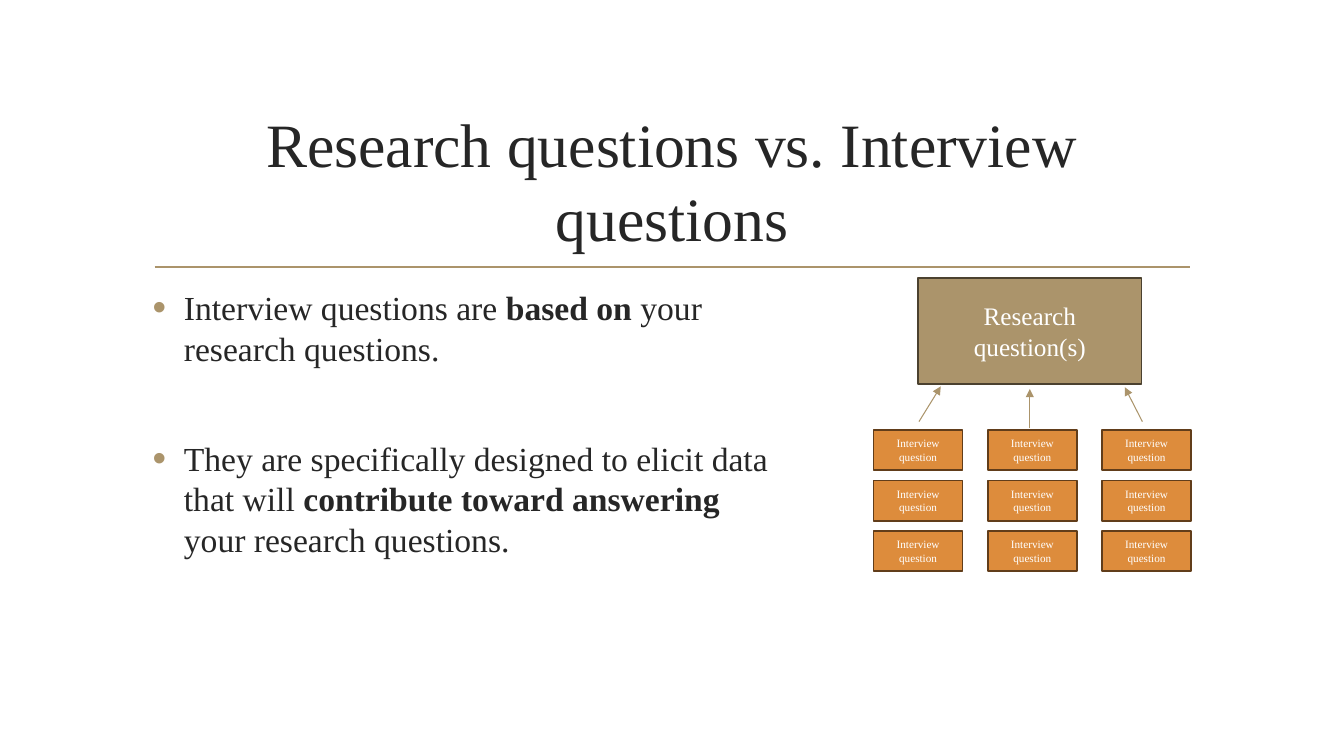
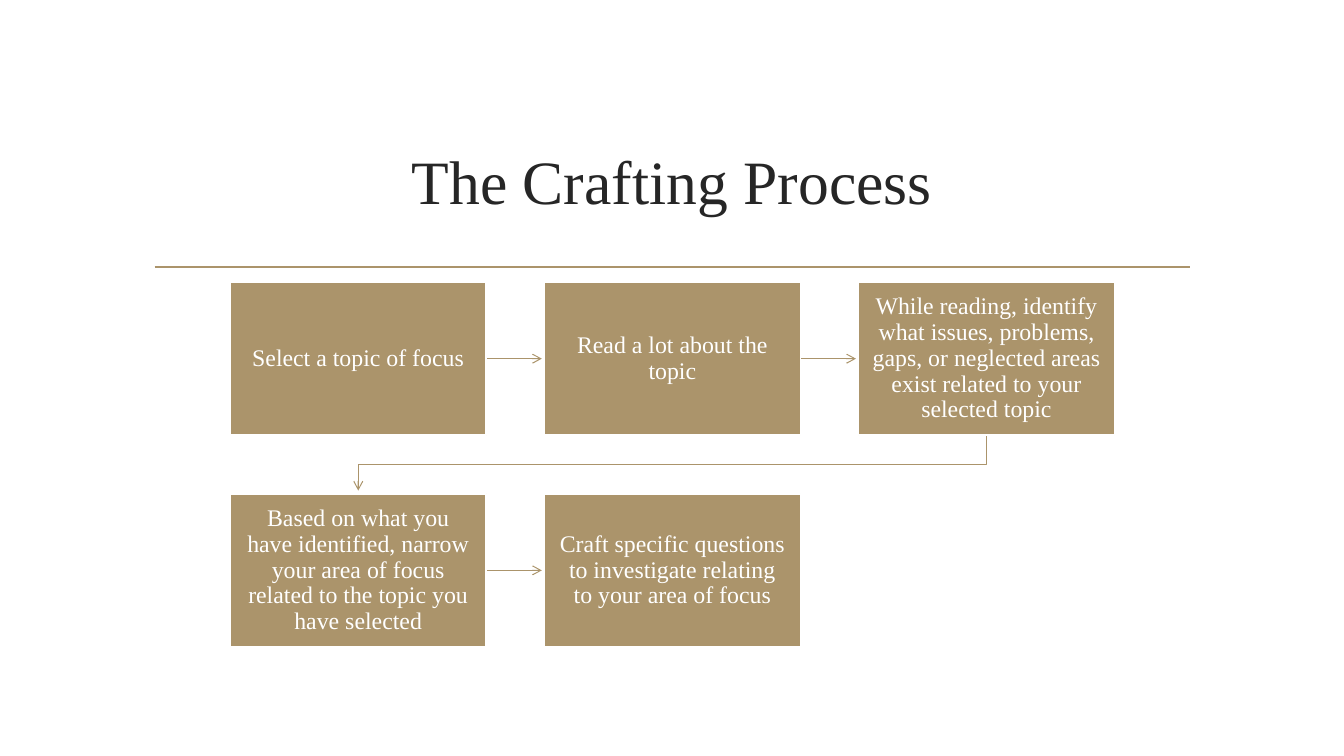
import pptx
import pptx.util
import pptx.dml.color
import pptx.enum.shapes
import pptx.enum.text
import pptx.oxml
import pptx.oxml.ns

Pt = pptx.util.Pt
INK, SAND, BARK = "262626", "AB946B", "4B412F"
RUST, UMBER, WHITE = "DD8C3C", "613D1A", "FFFFFF"


def paint(code):
    return pptx.dml.color.RGBColor.from_string(code)


def child(parent, tag, **attrs):
    node = pptx.oxml.parse_xml(f"<a:{tag} {pptx.oxml.ns.nsdecls('a')}/>")
    for key, value in attrs.items():
        node.set(key, value)
    parent.append(node)
    return node


class Deck:
    """Shared style and current slide, measured on a 16 by 9 grid."""

    font = "Times New Roman"
    middle = pptx.enum.text.MSO_ANCHOR.MIDDLE
    center = pptx.enum.text.PP_ALIGN.CENTER

    def __init__(self):
        self.file = pptx.Presentation()
        self.file.slide_width = pptx.util.Inches(13.33)
        self.file.slide_height = pptx.util.Inches(7.5)
        self.col = self.file.slide_width / 16
        self.row = self.file.slide_height / 9

    def place(self, *nums):
        units = (self.col, self.row) * 2
        return [round(num * unit) for num, unit in zip(nums, units)]

    def page(self, title):
        slide = self.file.slides.add_slide(self.file.slide_layouts[6])
        self.items = slide.shapes
        self.line((1.84, 3.18), (14.17, 3.18), width=1.25)
        box = self.items.add_textbox(*self.place(1.7, 1.28, 12.6, 1.72))
        self.label(box, title, 44, INK)

    def style(self, para, size, color):
        para.font.size = Pt(size)
        para.font.name = self.font
        para.font.color.rgb = paint(color)

    def label(self, shape, text, size, color=WHITE, inset=None, lead=None):
        frame = shape.text_frame
        frame.word_wrap = True
        frame.vertical_anchor = self.middle
        if inset is not None:
            frame.margin_left = frame.margin_right = pptx.util.Inches(inset)
            frame.margin_top = frame.margin_bottom = pptx.util.Inches(inset)
        para = frame.paragraphs[0]
        para.text = text
        para.alignment = self.center
        if lead is not None:
            para.line_spacing = lead
        self.style(para, size, color)

    def box(self, area, text, size, fill=SAND, edge=WHITE, **look):
        kind = pptx.enum.shapes.MSO_SHAPE.RECTANGLE
        shape = self.items.add_shape(kind, *self.place(*area))
        shape.shadow.inherit = False
        shape.fill.solid()
        shape.fill.fore_color.rgb = paint(fill)
        shape.line.color.rgb = paint(edge)
        shape.line.width = Pt(1.25)
        self.label(shape, text, size, **look)

    def stroke(self, shape, width, tip):
        shape.line.color.rgb = paint(SAND)
        shape.line.width = Pt(width)
        if tip:
            child(shape.line._get_or_add_ln(), "tailEnd", type=tip)

    def line(self, start, end, width=0.75, tip=None):
        kind = pptx.enum.shapes.MSO_CONNECTOR.STRAIGHT
        link = self.items.add_connector(kind, *self.place(*start, *end))
        self.stroke(link, width, tip)
        child(link._element.spPr, "effectLst")

    def bend(self, points, tip):
        first, *rest = [self.place(*point) for point in points]
        form = self.items.build_freeform(*first)
        form.add_line_segments(rest, close=False)
        shape = form.convert_to_shape()
        shape.shadow.inherit = False
        shape.fill.background()
        self.stroke(shape, 0.75, tip)

    def bullets(self, area, points, size, gap):
        frame = self.items.add_textbox(*self.place(*area)).text_frame
        frame.word_wrap = True
        for num, parts in enumerate(points):
            para = frame.add_paragraph() if num else frame.paragraphs[0]
            if num:
                para.space_before = Pt(gap)
            para.space_after = Pt(6)
            props = para._p.get_or_add_pPr()
            indent = pptx.util.Inches(0.31)
            props.set("marL", str(indent))
            props.set("indent", str(-indent))
            child(child(props, "buClr"), "srgbClr", val=SAND)
            child(props, "buSzPct", val="115000")
            child(props, "buFont", typeface="Arial")
            child(props, "buChar", char="•")
            for text, bold in parts:
                run = para.add_run()
                run.text = text
                if bold:
                    run.font.bold = True
            self.style(para, size, INK)


def compare(deck):
    deck.page("Research questions vs. Interview questions")
    deck.box((10.93, 3.31, 2.66, 1.26), "Research question(s)", 18, edge=BARK)
    deck.bullets((1.7, 3.36, 7.73, 4.36), [
        [("Interview questions are ", False), ("based on ", True),
         ("your research questions.", False)],
        [("They are specifically designed to elicit data that will ", False),
         ("contribute toward answering ", True),
         ("your research questions.", False)],
    ], 24, gap=44)
    for row in range(3):
        for col in range(3):
            area = 10.4 + 1.36 * col, 5.12 + 0.6 * row, 1.06, 0.48
            deck.box(area, "Interview question", 8, RUST, UMBER)
    for start, end in [((10.94, 5.02), (11.2, 4.6)),
                       ((12.26, 5.1), (12.26, 4.63)),
                       ((13.6, 5.02), (13.39, 4.61))]:
        deck.line(start, end, tip="triangle")


def process(deck):
    deck.page("The Crafting Process")
    steps = [
        "Select a topic of focus",
        "Read a lot about the topic",
        "While reading, identify what issues, problems, gaps, or neglected "
        "areas exist related to your selected topic",
        "Based on what you have identified, narrow your area of focus "
        "related to the topic you have selected",
        "Craft specific questions to investigate relating to your area of "
        "focus",
    ]
    wide, high, across = 3.05, 1.82, 3
    for num, text in enumerate(steps):
        row, col = divmod(num, across)
        left, top = 2.74 + 3.74 * col, 3.36 + 2.52 * row
        if num < len(steps) - 1:
            if col < across - 1:
                side, mid = left + wide, top + high / 2
                deck.line((side, mid), (side + 0.66, mid), tip="arrow")
            else:
                start, end = left + wide / 2, 2.74 + wide / 2
                base = top + high
                turn = base + 0.35
                deck.bend([(start, base), (start, turn), (end, turn),
                           (end, base + 0.66)], "arrow")
        deck.box((left, top, wide, high), text, 17, inset=0.13, lead=0.9)


def main():
    deck = Deck()
    compare(deck)
    process(deck)
    deck.file.save("out.pptx")


if __name__ == "__main__":
    main()
